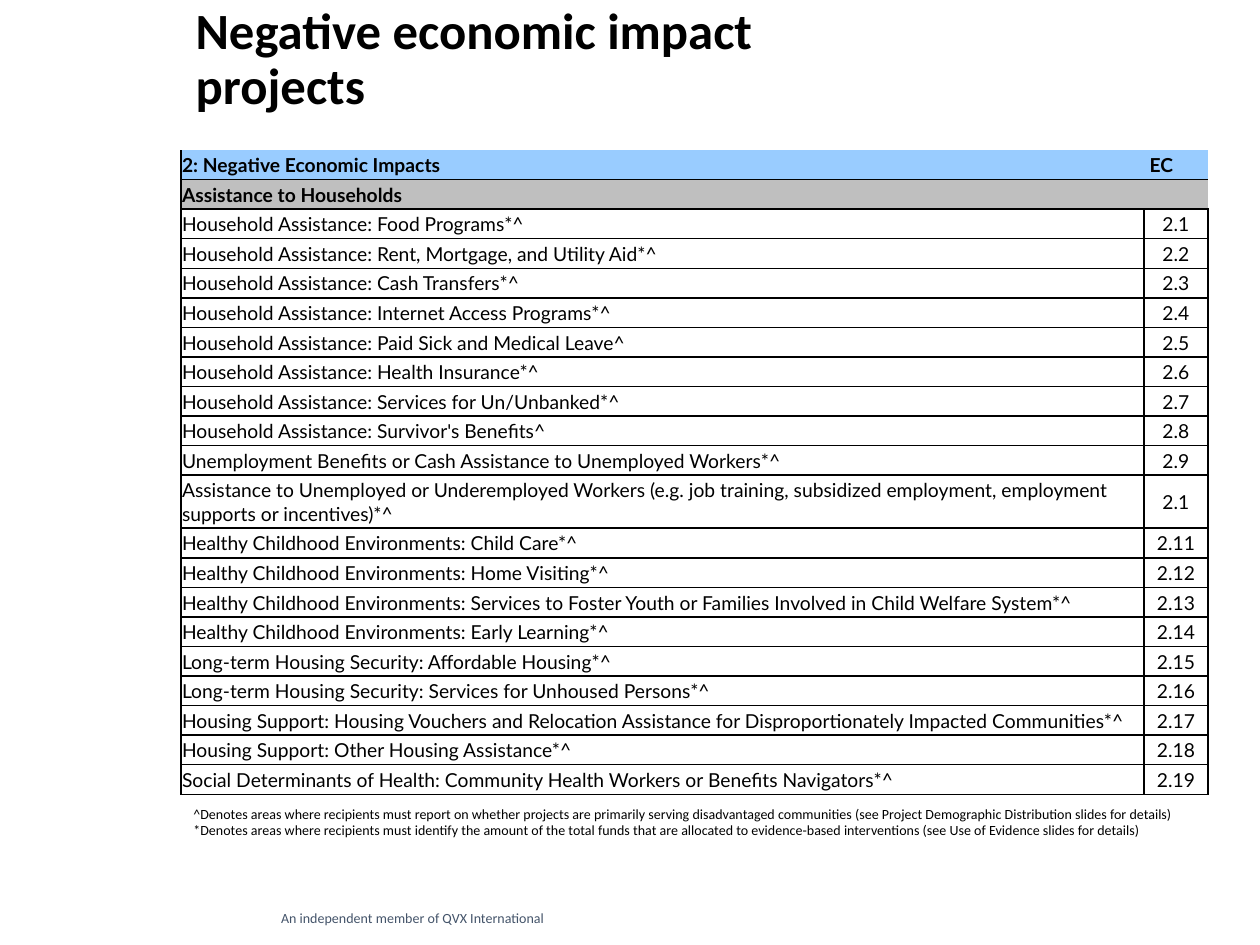
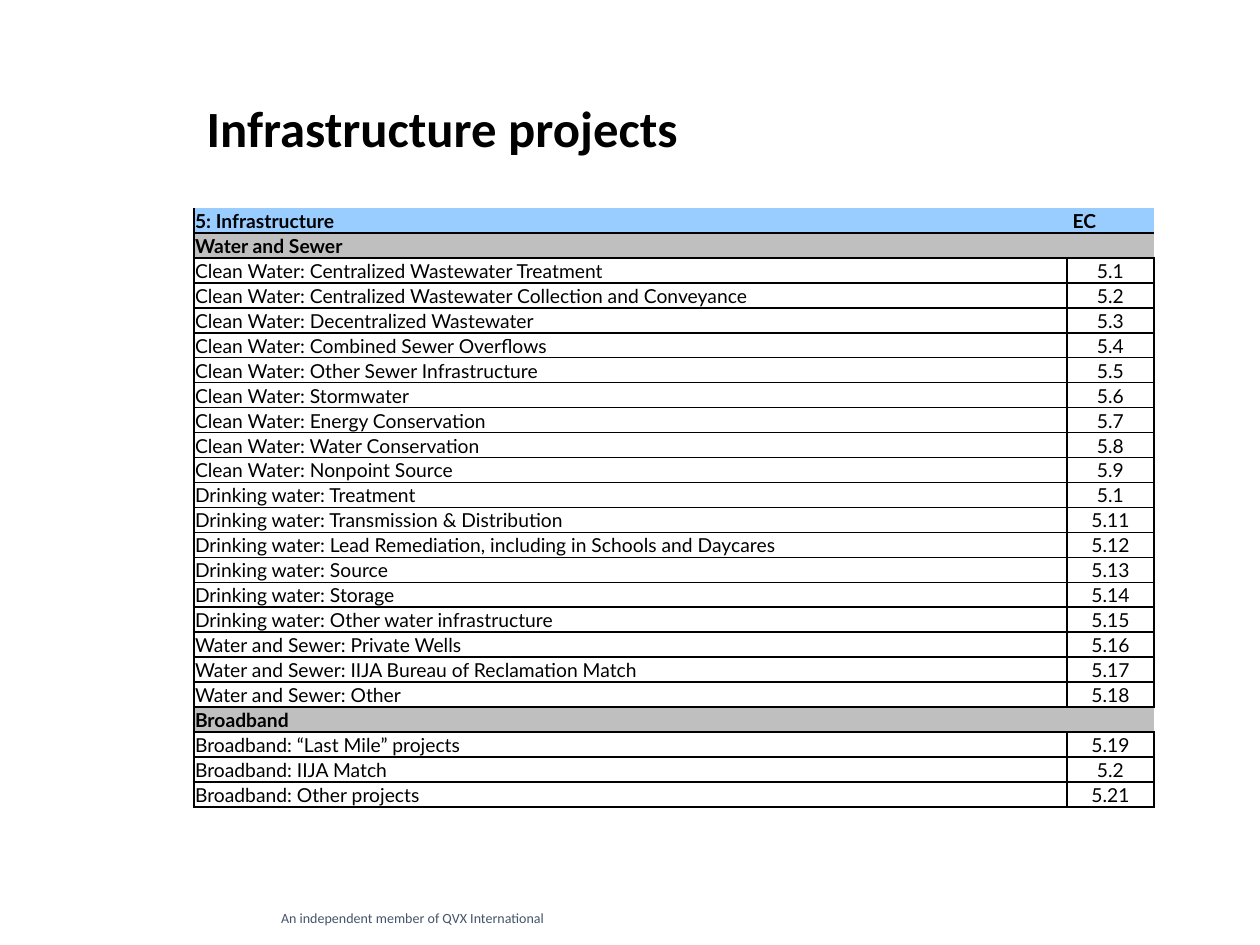
"""Build two slides listing eligible project categories and their codes."""
from lxml.etree import SubElement
from pptx import Presentation
from pptx.dml.color import RGBColor
from pptx.enum.text import MSO_ANCHOR, MSO_AUTO_SIZE, PP_ALIGN
from pptx.oxml.ns import qn
from pptx.util import Emu, Pt

PX = 914400 // 126
INK, SLATE, BLUE, GRAY = "000000", "44546A", "99CCFF", "BFBFBF"
HEAD, BODY = "Calibri", "Lato"
FOOT = "An independent member of QVX International"

PAGES = [
    {
        "title": "Negative economic impact projects",
        "spot": (183, 40, 756, 82),
        "grid": (181, 150, 645),
        "cols": (963, 64),
        "tall": {11: 53},
        "code": 2,
        "head": "2: Negative Economic Impacts",
        "parts": {
            "Assistance to Households": [
                "Household Assistance: Food Programs*^",
                "Household Assistance: Rent, Mortgage, and Utility Aid*^",
                "Household Assistance: Cash Transfers*^",
                "Household Assistance: Internet Access Programs*^",
                "Household Assistance: Paid Sick and Medical Leave^",
                "Household Assistance: Health Insurance*^",
                "Household Assistance: Services for Un/Unbanked*^",
                "Household Assistance: Survivor's Benefits^",
                "Unemployment Benefits or Cash Assistance to Unemployed Workers*^",
                "Assistance to Unemployed or Underemployed Workers (e.g. job training, "
                "subsidized employment, employment supports or incentives)*^",
                "Healthy Childhood Environments: Child Care*^",
                "Healthy Childhood Environments: Home Visiting*^",
                "Healthy Childhood Environments: Services to Foster Youth or Families "
                "Involved in Child Welfare System*^",
                "Healthy Childhood Environments: Early Learning*^",
                "Long-term Housing Security: Affordable Housing*^",
                "Long-term Housing Security: Services for Unhoused Persons*^",
                "Housing Support: Housing Vouchers and Relocation Assistance for "
                "Disproportionately Impacted Communities*^",
                "Housing Support: Other Housing Assistance*^",
                "Social Determinants of Health: Community Health Workers or "
                "Benefits Navigators*^",
            ],
        },
        "notes": [
            "^Denotes areas where recipients must report on whether projects are primarily "
            "serving disadvantaged communities (see Project Demographic Distribution "
            "slides for details)",
            "*Denotes areas where recipients must identify the amount of the total funds "
            "that are allocated to evidence-based interventions (see Use of Evidence "
            "slides for details)",
        ],
    },
    {
        "title": "Infrastructure projects",
        "spot": (194, 58, 806, 107),
        "grid": (194, 208, 599),
        "cols": (873, 87),
        "tall": {},
        "code": 5,
        "head": "5: Infrastructure",
        "parts": {
            "Water and Sewer": [
                "Clean Water: Centralized Wastewater Treatment",
                "Clean Water: Centralized Wastewater Collection and Conveyance",
                "Clean Water: Decentralized Wastewater",
                "Clean Water: Combined Sewer Overflows",
                "Clean Water: Other Sewer Infrastructure",
                "Clean Water: Stormwater",
                "Clean Water: Energy Conservation",
                "Clean Water: Water Conservation",
                "Clean Water: Nonpoint Source",
                "Drinking water: Treatment",
                "Drinking water: Transmission & Distribution",
                "Drinking water: Lead Remediation, including in Schools and Daycares",
                "Drinking water: Source",
                "Drinking water: Storage",
                "Drinking water: Other water infrastructure",
                "Water and Sewer: Private Wells",
                "Water and Sewer: IIJA Bureau of Reclamation Match",
                "Water and Sewer: Other",
            ],
            "Broadband": [
                "Broadband: “Last Mile” projects",
                "Broadband: IIJA Match",
                "Broadband: Other projects",
            ],
        },
        "notes": [],
    },
]


def px(*nums):
    return [Emu(num * PX) for num in nums]


def paint(font, name, size, color=INK, bold=False):
    font.name, font.size, font.bold = name, Pt(size), bold
    font.color.rgb = RGBColor.from_string(color)


def add_text(slide, spot, lines, color=INK):
    box = slide.shapes.add_textbox(*px(*spot))
    frame = box.text_frame
    frame.word_wrap = True
    frame.text = "\n".join(lines)
    for para in frame.paragraphs:
        paint(para.font, HEAD, 8, color)
    return box


def add_foot(slide, layout):
    box = add_text(slide, (94, 910, 548, 17), [FOOT], SLATE)
    frame = box.text_frame
    frame.margin_left, frame.margin_right = px(187, 0)
    frame.margin_top = frame.margin_bottom = 0
    layout.shapes.element.append(box.element)


def add_title(slide, text, spot):
    title = slide.shapes.title
    title.left, title.top, title.width, title.height = px(*spot)
    frame = title.text_frame
    frame.text, frame.word_wrap = text, True
    frame.auto_size = MSO_AUTO_SIZE.NONE
    frame.vertical_anchor = MSO_ANCHOR.BOTTOM
    para = frame.paragraphs[0]
    para.alignment, para.line_spacing = PP_ALIGN.LEFT, 0.9
    paint(para.font, HEAD, 29, bold=True)


def edge(cell, sides):
    props = cell._tc.get_or_add_tcPr()
    for side in "LRTB":
        line = SubElement(props, qn(f"a:ln{side}"), w=str(Pt(1)))
        if side in sides:
            fill = SubElement(line, qn("a:solidFill"))
            SubElement(fill, qn("a:srgbClr"), val=INK)
        else:
            SubElement(line, qn("a:noFill"))


def list_rows(page):
    """Return (name, code, fill, left sides, right sides) for each table row."""
    rows = [(page["head"], " EC", BLUE, "LB", "B")]
    num = 0
    for part, names in page["parts"].items():
        rows.append((part, "", GRAY, "LTB", "TB"))
        for name in names:
            num += 1
            code = f"{page['code']}.{num}".rstrip("0")
            rows.append((name, code, None, "LRTB", "LRTB"))
    return rows


def set_cell(cell, text, fill, sides, align):
    cell.text = text
    cell.vertical_anchor = MSO_ANCHOR.MIDDLE
    cell.margin_left = cell.margin_right = cell.margin_top = Emu(PX)
    cell.margin_bottom = 0
    edge(cell, sides)
    if fill:
        cell.fill.solid()
        cell.fill.fore_color.rgb = RGBColor.from_string(fill)
    else:
        cell.fill.background()
    para = cell.text_frame.paragraphs[0]
    para.alignment = align
    paint(para.font, BODY, 11, bold=bool(fill))


def add_grid(slide, page):
    rows = list_rows(page)
    left, top, high = page["grid"]
    cols, tall = page["cols"], page["tall"]
    spot = px(left, top, sum(cols), high)
    table = slide.shapes.add_table(len(rows), len(cols), *spot).table
    table.first_row = table.horz_banding = False
    for col, wide in zip(table.columns, px(*cols)):
        col.width = wide
    step = (high - sum(tall.values())) * PX // (len(rows) - len(tall))
    for at, (name, code, fill, near, far) in enumerate(rows):
        table.rows[at].height = Emu(tall[at] * PX if at in tall else step)
        first, last = table.cell(at, 0), table.cell(at, 1)
        set_cell(first, name, fill, near, PP_ALIGN.LEFT)
        set_cell(last, code, fill, far, PP_ALIGN.LEFT if fill else PP_ALIGN.CENTER)
        if not code:
            first.merge(last)


def main():
    deck = Presentation()
    deck.slide_width, deck.slide_height = px(1260, 945)
    layout = deck.slide_layouts[5]
    for page in PAGES:
        slide = deck.slides.add_slide(layout)
        if len(deck.slides) == 1:
            add_foot(slide, layout)
        add_title(slide, page["title"], page["spot"])
        add_grid(slide, page)
        if page["notes"]:
            add_text(slide, (181, 799, 1024, 47), page["notes"])
    deck.save("out.pptx")


if __name__ == "__main__":
    main()
